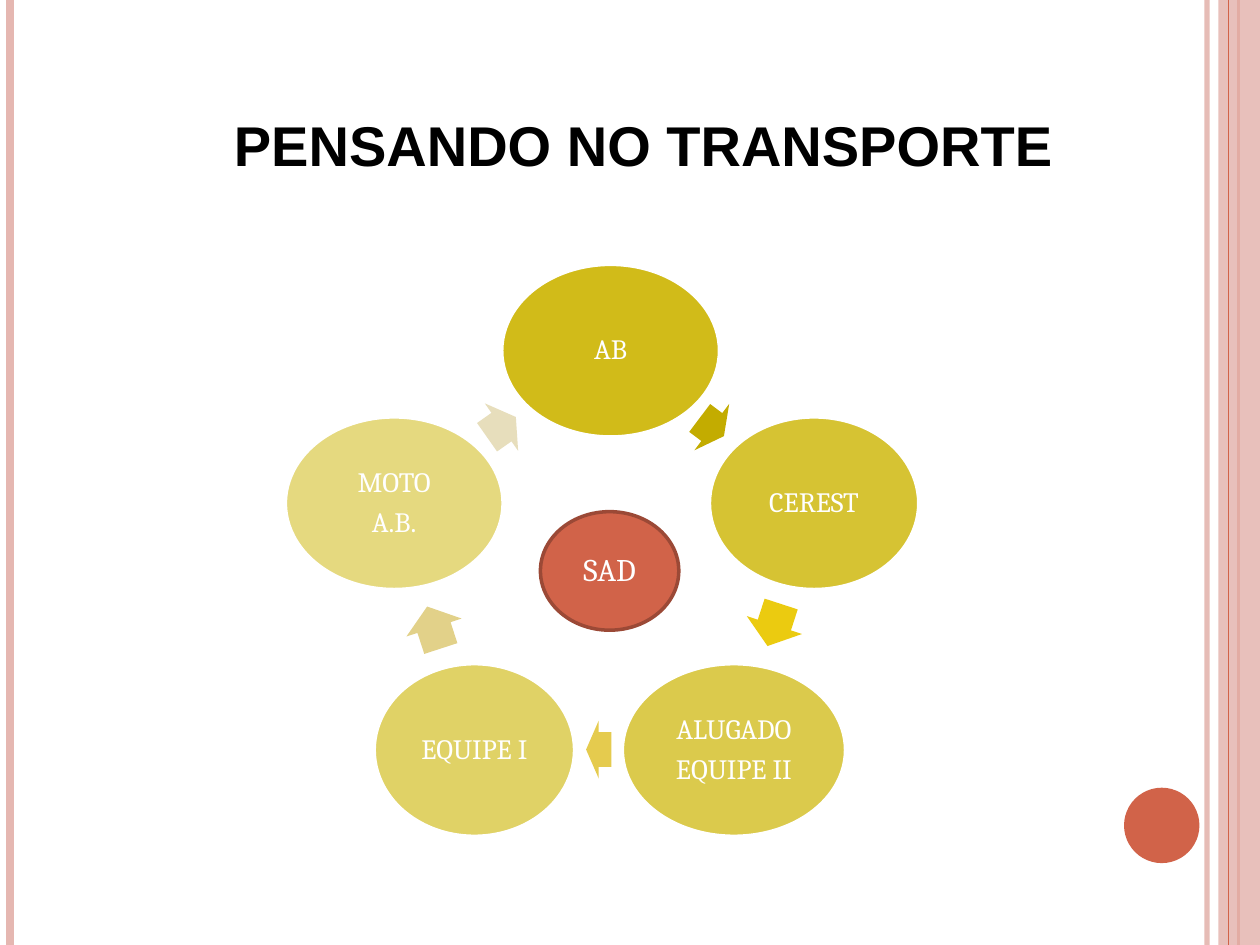
from dataclasses import dataclass
from math import cos, radians, sin

from lxml import etree
from pptx import Presentation
from pptx.dml.color import RGBColor
from pptx.enum.shapes import MSO_CONNECTOR, MSO_SHAPE
from pptx.enum.text import MSO_ANCHOR, PP_ALIGN
from pptx.oxml.ns import qn
from pptx.util import Cm, Pt

STRAIGHT = MSO_CONNECTOR.STRAIGHT
ELLIPSE, RECTANGLE, ARROW = MSO_SHAPE.OVAL, MSO_SHAPE.RECTANGLE, MSO_SHAPE.RIGHT_ARROW
CENTER = PP_ALIGN.CENTER
MIDDLE, BOTTOM = MSO_ANCHOR.MIDDLE, MSO_ANCHOR.BOTTOM


@dataclass(frozen=True)
class Theme:
    title_font: str = "Arial"
    body_font: str = "Cambria"
    title_size: int = 32
    node_size: int = 16
    hub_size: int = 18
    black: str = "000000"
    white: str = "FFFFFF"
    pink: str = "E5B7B1"
    red: str = "D16349"
    dark_red: str = "9B4936"
    gold: str = "CCB400"


@dataclass(frozen=True)
class Stripe:
    x: float
    color: str
    weight: float
    opacity: int = 100


@dataclass(frozen=True)
class Node:
    lines: tuple[str, ...]
    width: float
    shift: float = 0


@dataclass(frozen=True)
class Arrow:
    x: float  # centre
    y: float
    length: float
    rotation: float
    color: str


THEME = Theme()
PAGE_WIDTH, PAGE_HEIGHT = 25.4, 19.05

# Ring of nodes: a regular pentagon, clockwise from the top
RING_X, RING_Y, RING_RADIUS = 12.18, 11.52, 4.45
NODE_HEIGHT, ARROW_BREADTH = 3.48, 1.17
NODES = (
    Node(("AB",), 4.39, shift=0.13),
    Node(("CEREST",), 4.22),
    Node(("ALUGADO", "EQUIPE II"), 4.5),
    Node(("EQUIPE I",), 4.04),
    Node(("MOTO", "A.B."), 4.39),
)
ARROWS = (
    Arrow(14.35, 8.61, 0.61, 36.9, "C3AC00"),
    Arrow(15.61, 12.6, 0.89, 108, "EBCB10"),
    Arrow(12.07, 15.11, 0.51, 180, "E5CB4E"),
    Arrow(8.75, 12.65, 0.89, 252, "E2D189"),
    Arrow(10.11, 8.61, 0.71, 324.9, "E7DEBC"),
)
STRIPES = (
    Stripe(24.33, THEME.pink, 3, 93),
    Stripe(0.2, THEME.pink, 4.5),
    Stripe(24.97, THEME.red, 1.5),
)
EDGE_LINE = Stripe(24.77, THEME.red, 0.75)


def set_opacity(fill, color: str, percent: int) -> None:
    fill.solid()
    fill.fore_color.rgb = RGBColor.from_string(color)
    if percent < 100:
        tint = fill._xPr.find(".//" + qn("a:srgbClr"))
        etree.SubElement(tint, qn("a:alpha"), val=str(percent * 1000))


def draw_stripe(page, stripe: Stripe) -> None:
    x = Cm(stripe.x)
    line = page.shapes.add_connector(STRAIGHT, x, 0, x, Cm(PAGE_HEIGHT))
    line.line.width = Pt(stripe.weight)
    set_opacity(line.line.fill, stripe.color, stripe.opacity)
    etree.SubElement(line._element.spPr, qn("a:effectLst"))


def draw_shape(page, kind, x: float, y: float, width: float, height: float,
               color: str, opacity: int = 100, outline: str = ""):
    """Draw a preset shape centred on x, y."""
    shape = page.shapes.add_shape(kind, Cm(x - width / 2), Cm(y - height / 2),
                                  Cm(width), Cm(height))
    shape.shadow.inherit = False
    set_opacity(shape.fill, color, opacity)
    if outline:
        shape.line.color.rgb = RGBColor.from_string(outline)
        shape.line.width = Pt(2)
    else:
        shape.line.fill.background()
    return shape


def format_paragraph(para, font: str, size: int, color: str, bold: bool = False) -> None:
    para.alignment = CENTER
    para.font.name = font
    para.font.size = Pt(size)
    para.font.bold = bold
    para.font.color.rgb = RGBColor.from_string(color)


def write_label(shape, lines: tuple[str, ...], size: int) -> None:
    box = shape.text_frame
    box.word_wrap = True
    box.vertical_anchor = MIDDLE
    box.margin_left = box.margin_right = box.margin_top = box.margin_bottom = Cm(0.05)
    box.text = "\n".join(lines)
    for para in box.paragraphs:
        format_paragraph(para, THEME.body_font, size, THEME.white)
        para.line_spacing = 0.9
        if len(lines) > 1:
            para.space_after = Pt(0.35 * size)


def draw_frame(page) -> None:
    for stripe in STRIPES:
        draw_stripe(page, stripe)
    band = 0.84
    draw_shape(page, RECTANGLE, PAGE_WIDTH - band / 2, PAGE_HEIGHT / 2,
               band, PAGE_HEIGHT, THEME.pink, 87)
    draw_stripe(page, EDGE_LINE)
    draw_shape(page, ELLIPSE, 23.42, 16.64, 1.52, 1.52, THEME.red)


def write_title(page) -> None:
    title = page.shapes.title
    title.left, title.top = Cm(1.7), Cm(0.74)
    title.width, title.height = Cm(22.86), Cm(2.97)
    title.text_frame.vertical_anchor = BOTTOM
    title.text_frame.text = "PENSANDO NO TRANSPORTE "
    format_paragraph(title.text_frame.paragraphs[0], THEME.title_font,
                     THEME.title_size, THEME.black, bold=True)


def draw_cycle(page) -> None:
    for index, (node, arrow) in enumerate(zip(NODES, ARROWS)):
        angle = radians(index * 360 / len(NODES))
        oval = draw_shape(page, ELLIPSE,
                          RING_X + RING_RADIUS * sin(angle) + node.shift,
                          RING_Y - RING_RADIUS * cos(angle),
                          node.width, NODE_HEIGHT, THEME.gold,
                          90 - 10 * index, THEME.white)
        write_label(oval, node.lines, THEME.node_size)
        pointer = draw_shape(page, ARROW, arrow.x, arrow.y,
                             arrow.length, ARROW_BREADTH, arrow.color)
        pointer.adjustments[0] = 0.6
        pointer.rotation = arrow.rotation


def main() -> None:
    deck = Presentation()
    deck.slide_width, deck.slide_height = Cm(PAGE_WIDTH), Cm(PAGE_HEIGHT)
    page = deck.slides.add_slide(deck.slide_layouts[5])  # title only
    draw_frame(page)
    write_title(page)
    draw_cycle(page)
    # Hub of the cycle
    hub = draw_shape(page, ELLIPSE, 12.29, 11.51, 2.79, 2.39,
                     THEME.red, outline=THEME.dark_red)
    write_label(hub, ("SAD",), THEME.hub_size)
    deck.save("out.pptx")


if __name__ == "__main__":
    main()
